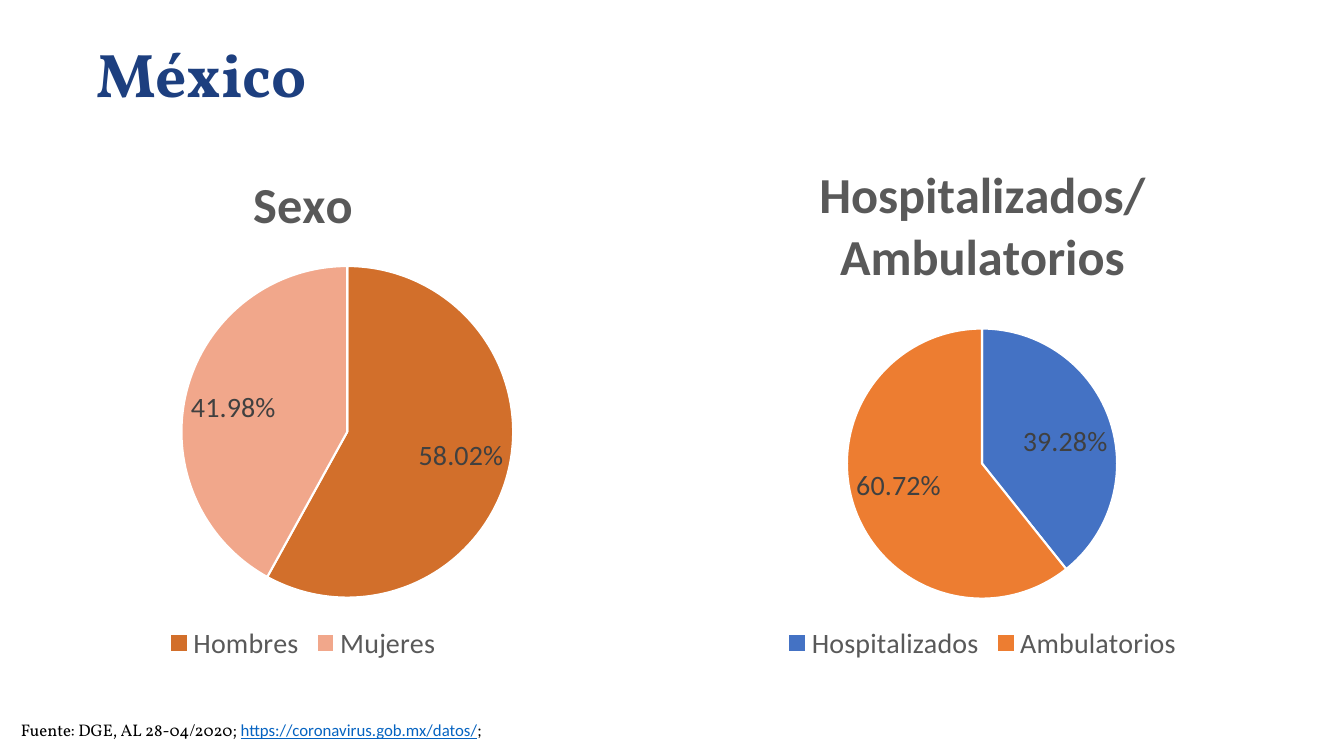
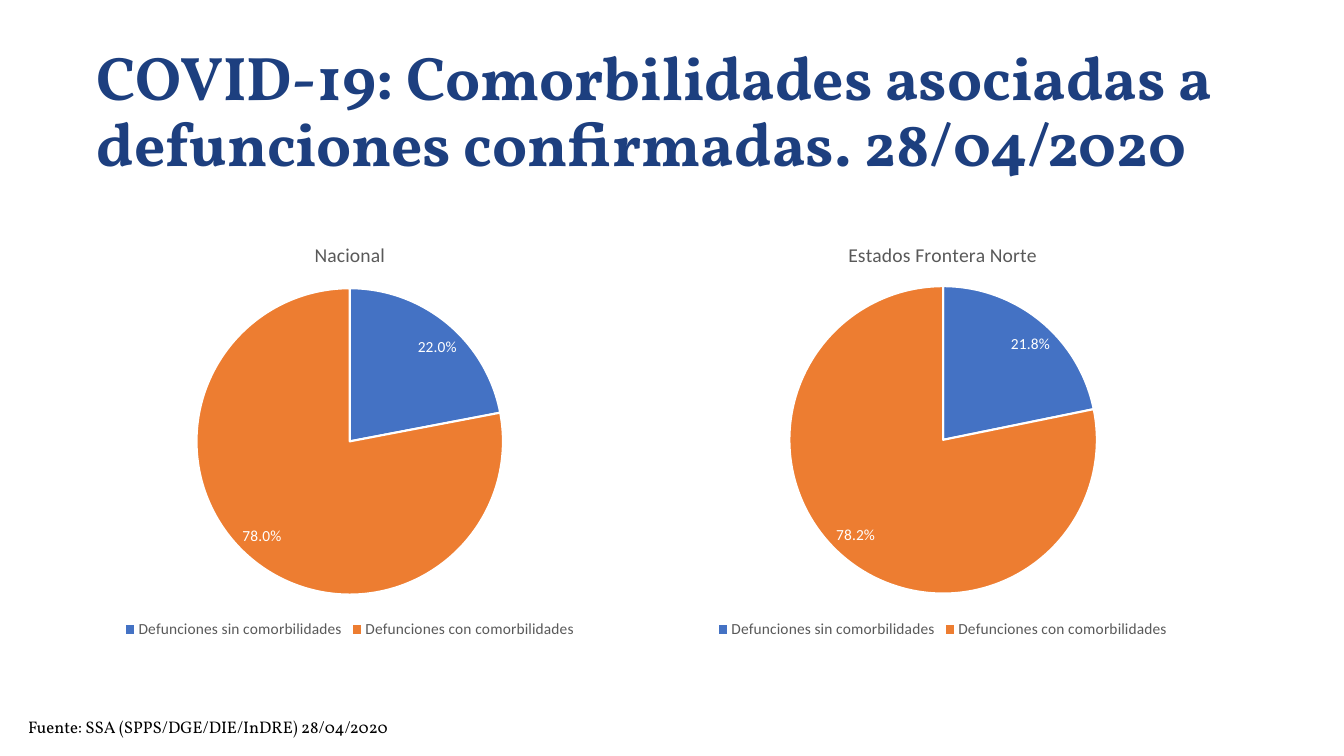
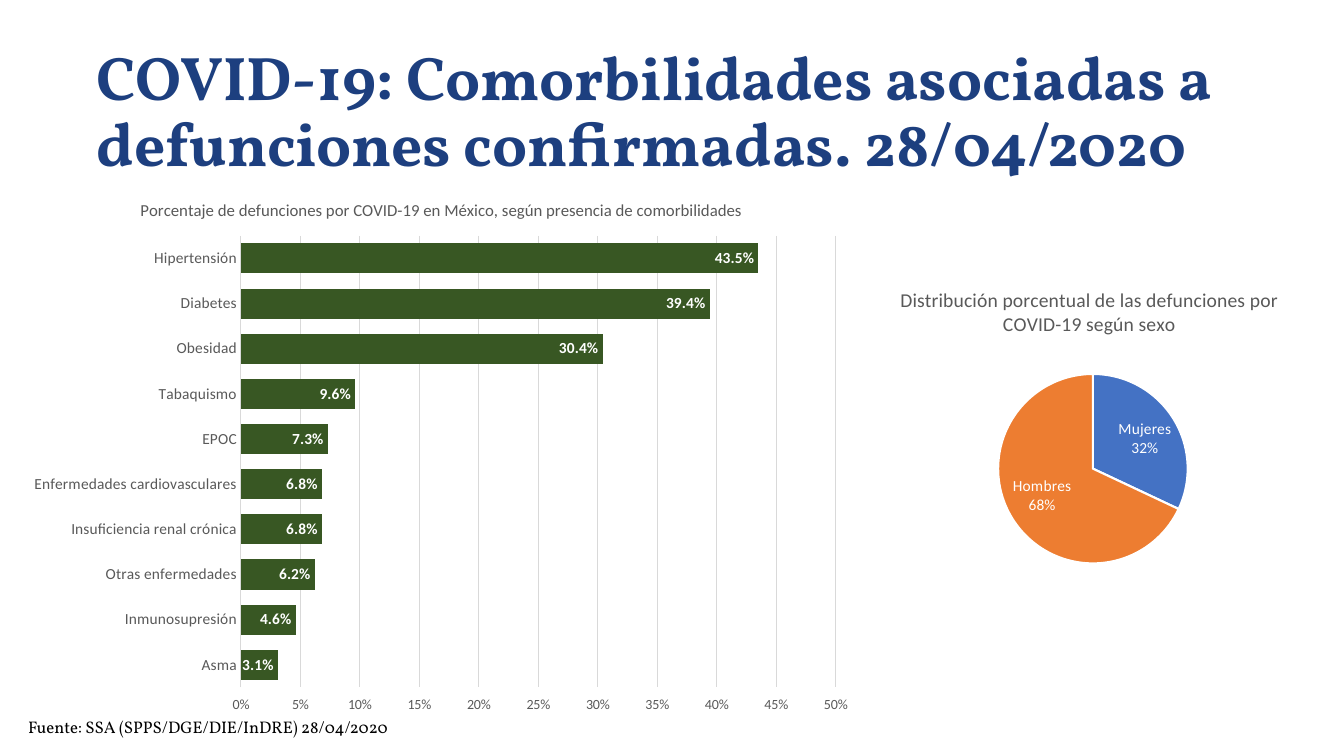
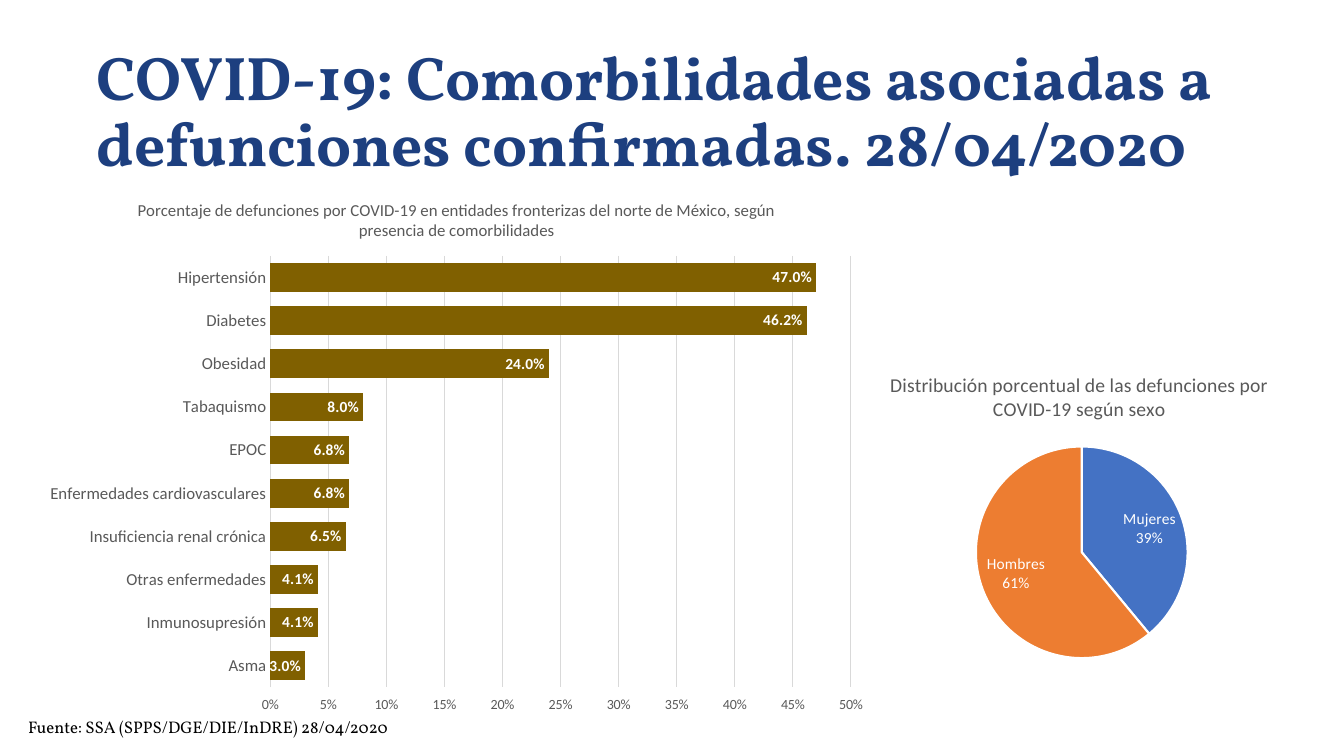
import pptx
import pptx.util
import pptx.chart.data
import pptx.dml.color
import pptx.enum.chart
import pptx.enum.text
import pptx.oxml

Inches, Pt = pptx.util.Inches, pptx.util.Pt
XL = pptx.enum.chart
TEXT = pptx.enum.text

HEX = {
    "navy": "1D3F7F", "black": "000000", "white": "FFFFFF", "link": "0563C1",
    "gray": "595959", "dark": "404040", "grid": "D9D9D9",
    "rust": "D26F2B", "peach": "F1A78B", "blue": "4472C4", "orange": "ED7D31",
    "green": "385723", "olive": "806000",
}
SERIF, SANS = "Vollkorn", "Calibri"

TOPIC = "COVID-19: Comorbilidades asociadas a defunciones confirmadas. 28/04/2020"
BOX = (0.86, 0.4, 11.5, 1.45)
SOURCE = {
    "box": (0.18, 7.05, 11.23, 0.31),
    "runs": [("Fuente: SSA (SPPS/DGE/DIE/InDRE) 28/04/2020", {})],
    "space": 1.07,
}
SITE = {
    "box": (0.11, 7.1, 13.02, 0.31),
    "runs": [
        ("Fuente: DGE, AL 28-04/2020; ", {}),
        ("https://coronavirus.gob.mx/datos/",
         {"font": SANS, "color": "link", "line": True}),
        (";", {"font": SANS}),
    ],
    "space": 0.9,
}

DEATHS = ["Defunciones sin comorbilidades", "Defunciones con comorbilidades"]
SEX = ["Mujeres", "Hombres"]
BY_SEX = "Distribución porcentual de las defunciones por COVID-19 según sexo"
ILLS = [
    "Hipertensión", "Diabetes", "Obesidad", "Tabaquismo", "EPOC",
    "Enfermedades cardiovasculares", "Insuficiencia renal crónica",
    "Otras enfermedades", "Inmunosupresión", "Asma",
]

# Kinds of chart: what charts of one kind have in common
BIG = {"size": 36, "bold": True, "label": 20, "ink": "dark",
       "format": "0.00%", "legend": 20}
MID = {"size": 14, "label": 11, "format": "0.0%", "legend": 11}
SMALL = {"size": 14, "label": 11, "format": "0%", "names": True}
BAR = {"size": 12, "label": 11, "format": "0.0%"}

# "box" is the whole chart, "plot" its drawing area, both in slide inches
SLIDES = [
    {"title": "México", "box": (0.86, 0.1, 11.5, 1.33), "foot": SITE, "charts": [
        {**BIG, "title": "Sexo", "box": (-0.9, 1.43, 7.81, 5.18),
         "plot": (1.8, 2.64, 3.29, 3.29), "cats": ["Hombres", "Mujeres"],
         "vals": [0.5802, 0.4198], "fills": ["rust", "peach"]},
        {**BIG, "title": "Hospitalizados/\nAmbulatorios",
         "box": (5.84, 1.43, 7.81, 5.18), "plot": (8.4, 3.26, 2.68, 2.68),
         "cats": ["Hospitalizados", "Ambulatorios"], "vals": [0.3928, 0.6072]},
    ]},
    {"title": TOPIC, "box": BOX, "foot": SOURCE, "charts": [
        {**MID, "title": "Nacional", "box": (0.36, 2.22, 6.22, 4.16),
         "plot": (1.95, 2.86, 3.04, 3.04), "cats": DEATHS, "vals": [0.22, 0.78]},
        {**MID, "title": "Estados Frontera Norte", "box": (6.24, 2.22, 6.22, 4.16),
         "plot": (7.83, 2.84, 3.05, 3.05), "cats": DEATHS, "vals": [0.218, 0.782]},
    ]},
    {"title": TOPIC, "box": BOX, "foot": SOURCE, "charts": [
        {**BAR, "title": "Porcentaje de defunciones por COVID-19 en México, "
                         "según presencia de comorbilidades",
         "box": (0.18, 1.78, 8.4, 5.34), "plot": (2.39, 2.34, 5.9, 4.48),
         "cats": ILLS, "fill": "green", "axis": 11,
         "vals": [0.435, 0.394, 0.304, 0.096, 0.073,
                  0.068, 0.068, 0.062, 0.046, 0.031]},
        {**SMALL, "title": BY_SEX, "box": (8.28, 2.69, 5.05, 3.21),
         "plot": (9.9, 3.71, 1.88, 1.88), "cats": SEX, "vals": [32, 68]},
    ]},
    {"title": TOPIC, "box": BOX, "foot": SOURCE, "charts": [
        {**SMALL, "title": BY_SEX, "box": (8.18, 3.53, 5.05, 3.21),
         "plot": (9.68, 4.43, 2.1, 2.1), "cats": SEX, "vals": [39, 61]},
        {**BAR, "title": "Porcentaje de defunciones por COVID-19 en entidades "
                         "fronterizas del norte de México, según presencia "
                         "de comorbilidades",
         "box": (0.33, 1.78, 8.4, 5.34), "plot": (2.68, 2.54, 5.76, 4.28),
         "cats": ILLS, "fill": "olive", "axis": 12,
         "vals": [0.47, 0.462, 0.24, 0.08, 0.068,
                  0.068, 0.065, 0.041, 0.041, 0.03]},
    ]},
]


def rgb(name):
    return pptx.dml.color.RGBColor.from_string(HEX[name])


def style(face, font=SANS, size=10, color="gray", bold=False, line=False):
    face.name, face.size, face.bold = font, Pt(size), bold
    face.underline = line
    face.color.rgb = rgb(color)


def write(frame, text, space=None, **form):
    """Add text to the first paragraph; each further line gets its own."""
    for num, part in enumerate(text.split("\n")):
        para = frame.add_paragraph() if num else frame.paragraphs[0]
        if space:
            para.alignment = TEXT.PP_ALIGN.LEFT
            para.line_spacing = space
        run = para.add_run()
        run.text = part
        style(run.font, **form)


def paint(part, name):
    part.format.fill.solid()
    part.format.fill.fore_color.rgb = rgb(name)


def place(shape, box):
    shape.left, shape.top, shape.width, shape.height = map(Inches, box)


def fix_plot(chart, box, plot):
    """Pin the inner plot area, given in slide inches."""
    area = chart.element.find(".//{*}plotArea")
    for old in area.findall("{*}layout"):
        area.remove(old)
    parts = {
        "x": (plot[0] - box[0]) / box[2], "y": (plot[1] - box[1]) / box[3],
        "w": plot[2] / box[2], "h": plot[3] / box[3],
    }
    marks = "".join(f'<c:{key}Mode val="edge"/>' for key in "xy")
    marks += "".join(f'<c:{key} val="{val:.4f}"/>' for key, val in parts.items())
    area.insert(0, pptx.oxml.parse_xml(
        '<c:layout xmlns:c="http://schemas.openxmlformats.org/drawingml/2006/chart">'
        f'<c:manualLayout><c:layoutTarget val="inner"/>{marks}'
        '</c:manualLayout></c:layout>'))


def format_bars(chart, item):
    plot = chart.plots[0]
    plot.gap_width = 50
    plot.vary_by_categories = False
    paint(plot.series[0], item["fill"])
    cat, val = chart.category_axis, chart.value_axis
    cat.reverse_order = True
    cat.has_major_gridlines = False
    val.minimum_scale, val.maximum_scale, val.major_unit = 0, 0.5, 0.05
    val.has_major_gridlines = True
    # The categories run downwards, so the high end is the bottom
    val.tick_label_position = XL.XL_TICK_LABEL_POSITION.HIGH
    val.tick_labels.number_format = "0%"
    val.tick_labels.number_format_is_linked = False
    for axis, size in ((cat, item["axis"]), (val, 10)):
        axis.major_tick_mark = axis.minor_tick_mark = XL.XL_TICK_MARK.NONE
        style(axis.tick_labels.font, size=size)
    for rule in (cat.format.line, val.major_gridlines.format.line):
        rule.width = Pt(0.75)
        rule.color.rgb = rgb("grid")
    val.format.line.fill.background()


def format_pie(chart, item):
    plot = chart.plots[0]
    plot.vary_by_categories = True
    for num, name in enumerate(item.get("fills", ["blue", "orange"])):
        wedge = plot.series[0].points[num]
        paint(wedge, name)
        wedge.format.line.width = Pt(1.5)
        wedge.format.line.color.rgb = rgb("white")


def add_chart(slide, item):
    bars = "axis" in item
    kind = XL.XL_CHART_TYPE.BAR_CLUSTERED if bars else XL.XL_CHART_TYPE.PIE
    data = pptx.chart.data.CategoryChartData()
    data.categories = item["cats"]
    data.add_series("Series 1", item["vals"])
    chart = slide.shapes.add_chart(kind, *map(Inches, item["box"]), data).chart
    style(chart.font, color="black")

    chart.has_title = True
    write(chart.chart_title.text_frame, item["title"], size=item["size"],
          bold=item.get("bold", False))
    chart.chart_title.include_in_layout = False

    chart.has_legend = "legend" in item
    if chart.has_legend:
        chart.legend.position = XL.XL_LEGEND_POSITION.BOTTOM
        chart.legend.include_in_layout = False
        style(chart.legend.font, size=item["legend"])

    (format_bars if bars else format_pie)(chart, item)

    plot = chart.plots[0]
    plot.has_data_labels = True
    tags = plot.data_labels
    names = item.get("names", False)
    tags.show_value = not names
    tags.show_percentage = tags.show_category_name = names
    tags.number_format = item["format"]
    tags.number_format_is_linked = False
    spot = XL.XL_LABEL_POSITION
    tags.position = spot.INSIDE_END if bars else spot.BEST_FIT
    style(tags.font, size=item["label"], color=item.get("ink", "white"), bold=bars)
    fix_plot(chart, item["box"], item["plot"])


def add_title(slide, page):
    title = slide.shapes.title
    place(title, page["box"])
    frame = title.text_frame
    frame.word_wrap = True
    frame.auto_size = TEXT.MSO_AUTO_SIZE.NONE
    frame.vertical_anchor = TEXT.MSO_ANCHOR.MIDDLE
    write(frame, page["title"], space=0.9, font=SERIF, size=44, color="navy",
          bold=True)


def add_foot(slide, foot):
    frame = slide.shapes.add_textbox(*map(Inches, foot["box"])).text_frame
    frame.word_wrap = True
    frame.vertical_anchor = TEXT.MSO_ANCHOR.MIDDLE
    for text, form in foot["runs"]:
        write(frame, text, space=foot["space"],
              **{"font": SERIF, "size": 12, "color": "black", **form})


def main():
    deck = pptx.Presentation()
    deck.slide_width, deck.slide_height = Inches(13.33), Inches(7.5)
    for page in SLIDES:
        slide = deck.slides.add_slide(deck.slide_layouts[5])
        add_title(slide, page)
        add_foot(slide, page["foot"])
        for item in page["charts"]:
            add_chart(slide, item)
    deck.save("out.pptx")


if __name__ == "__main__":
    main()
